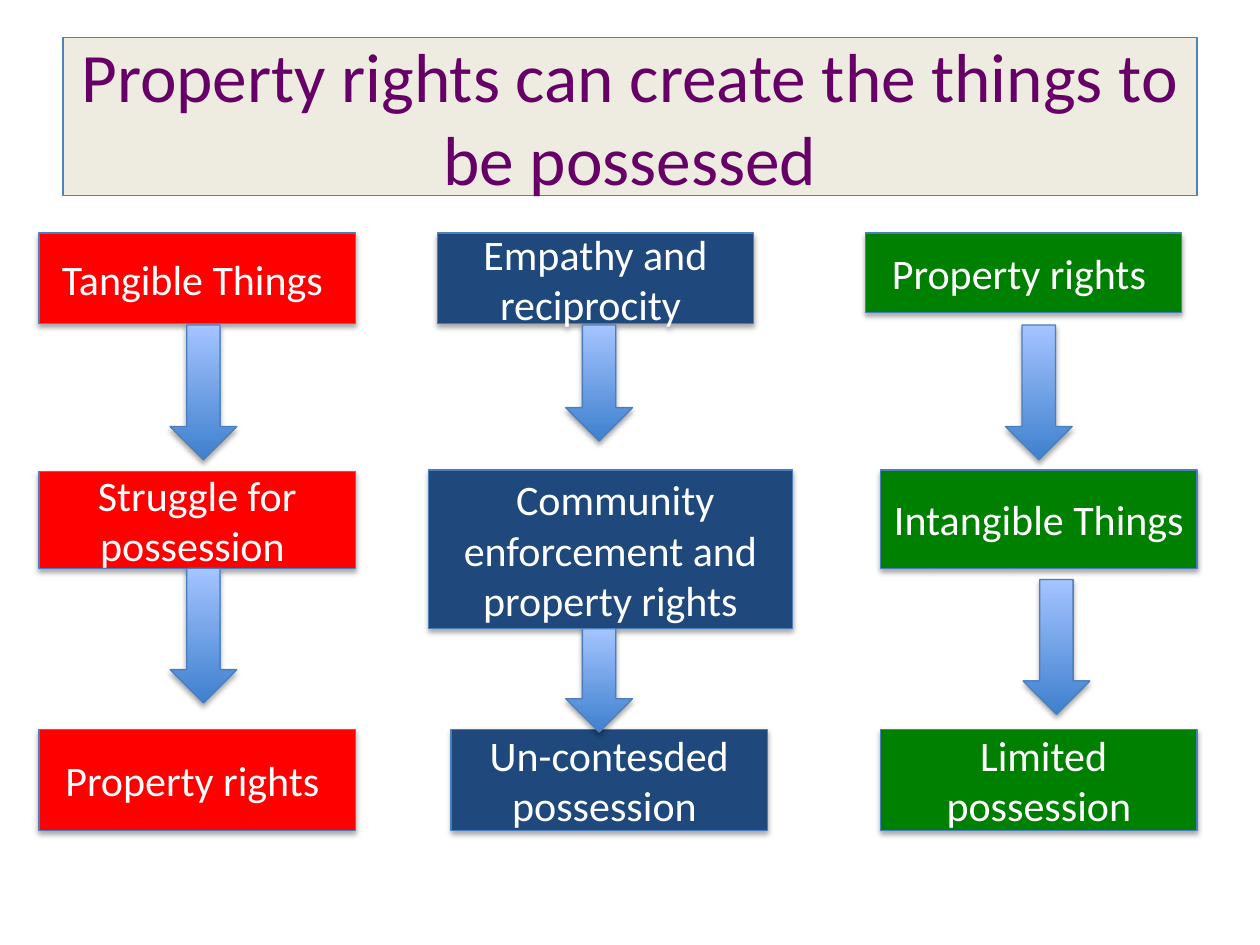
import pptx
import pptx.util
import pptx.dml.color
import pptx.enum.shapes
import pptx.enum.text
import lxml.etree

Inches = pptx.util.Inches
Pt = pptx.util.Pt
RGBColor = pptx.dml.color.RGBColor
SHAPE = pptx.enum.shapes.MSO_SHAPE

RED = RGBColor(0xFF, 0x00, 0x00)
NAVY = RGBColor(0x1F, 0x49, 0x7D)
GREEN = RGBColor(0x00, 0x80, 0x00)
WHITE = RGBColor(0xFF, 0xFF, 0xFF)
CREAM = RGBColor(0xEE, 0xEC, 0xE1)
PLUM = RGBColor(0x66, 0x00, 0x66)
EDGE = RGBColor(0x4B, 0x7E, 0xBC)
FRAME = RGBColor(0x4F, 0x81, 0xBD)
DEEP = RGBColor(0x3F, 0x80, 0xCE)
PALE = RGBColor(0xA4, 0xC4, 0xFF)

FONT = "Calibri"
WIDE = 2.51
HEAD = 0.53
TALL = 1.07

COLUMNS = [
    (RED,
     [("Tangible Things ", (0.31, 1.85, WIDE, 0.72)),
      ("Struggle for possession ", (0.31, 3.74, WIDE, 0.77)),
      ("Property rights ", (0.31, 5.79, WIDE, 0.8))],
     [(1.35, 2.58, HEAD, TALL), (1.35, 4.51, HEAD, TALL)]),
    (NAVY,
     [("Empathy and reciprocity ", (3.47, 1.85, WIDE, 0.72)),
      (" Community enforcement and property rights", (3.4, 3.73, 2.89, 1.26)),
      ("Un-contesded possession ", (3.58, 5.79, WIDE, 0.8))],
     [(4.49, 2.58, HEAD, 0.92), (4.49, 4.99, HEAD, 0.82)]),
    (GREEN,
     [("Property rights ", (6.87, 1.85, WIDE, 0.63)),
      ("Intangible Things ", (6.99, 3.73, WIDE, 0.78)),
      (" Limited possession", (6.99, 5.79, WIDE, 0.8))],
     [(7.98, 2.58, HEAD, TALL), (8.12, 4.6, HEAD, TALL)]),
]


def write(shape, text, size, color):
    frame = shape.text_frame
    frame.word_wrap = True
    frame.auto_size = pptx.enum.text.MSO_AUTO_SIZE.NONE
    frame.vertical_anchor = pptx.enum.text.MSO_ANCHOR.MIDDLE
    para = frame.paragraphs[0]
    para.alignment = pptx.enum.text.PP_ALIGN.CENTER
    run = para.add_run()
    run.text = text
    run.font.name = FONT
    run.font.size = Pt(size)
    run.font.color.rgb = color


def paint(shape, color, edge):
    shape.fill.solid()
    shape.fill.fore_color.rgb = color
    outline(shape, edge)


def outline(shape, color):
    shape.line.color.rgb = color
    shape.line.width = Pt(0.75)


def shade(shape):
    shape.shadow.inherit = False
    qn = pptx.oxml.ns.qn
    effect = shape.element.spPr.find(qn("a:effectLst"))
    outer = lxml.etree.SubElement(
        effect, qn("a:outerShdw"), blurRad=str(Pt(3.1)), dist=str(Pt(1.8)),
        dir="5400000", rotWithShape="0")
    black = lxml.etree.SubElement(outer, qn("a:srgbClr"), val="000000")
    lxml.etree.SubElement(black, qn("a:alpha"), val="35000")


def add_title(slide, box):
    title = slide.shapes.title
    title.left, title.top, title.width, title.height = map(Inches, box)
    paint(title, CREAM, FRAME)
    write(title, "Property rights can create the things to be possessed",
          39.6, PLUM)


def add_card(slide, box, text, color):
    card = slide.shapes.add_shape(SHAPE.RECTANGLE, *map(Inches, box))
    paint(card, color, EDGE)
    shade(card)
    write(card, text, 24, WHITE)


def add_arrow(slide, box):
    arrow = slide.shapes.add_shape(SHAPE.DOWN_ARROW, *map(Inches, box))
    arrow.fill.gradient()
    arrow.fill.gradient_angle = 90
    for stop, color, place in zip(arrow.fill.gradient_stops,
                                  (DEEP, PALE), (0, 1)):
        stop.color.rgb = color
        stop.position = place
    outline(arrow, EDGE)
    shade(arrow)


def main():
    deck = pptx.Presentation()
    deck.slide_width, deck.slide_height = Inches(10), Inches(7.5)
    slide = deck.slides.add_slide(deck.slide_layouts[5])
    add_title(slide, (0.5, 0.3, 9, 1.25))
    for color, cards, _ in COLUMNS:
        for text, box in cards:
            add_card(slide, box, text, color)
    for _, _, arrows in COLUMNS:
        for box in arrows:
            add_arrow(slide, box)
    deck.save("out.pptx")


if __name__ == "__main__":
    main()
